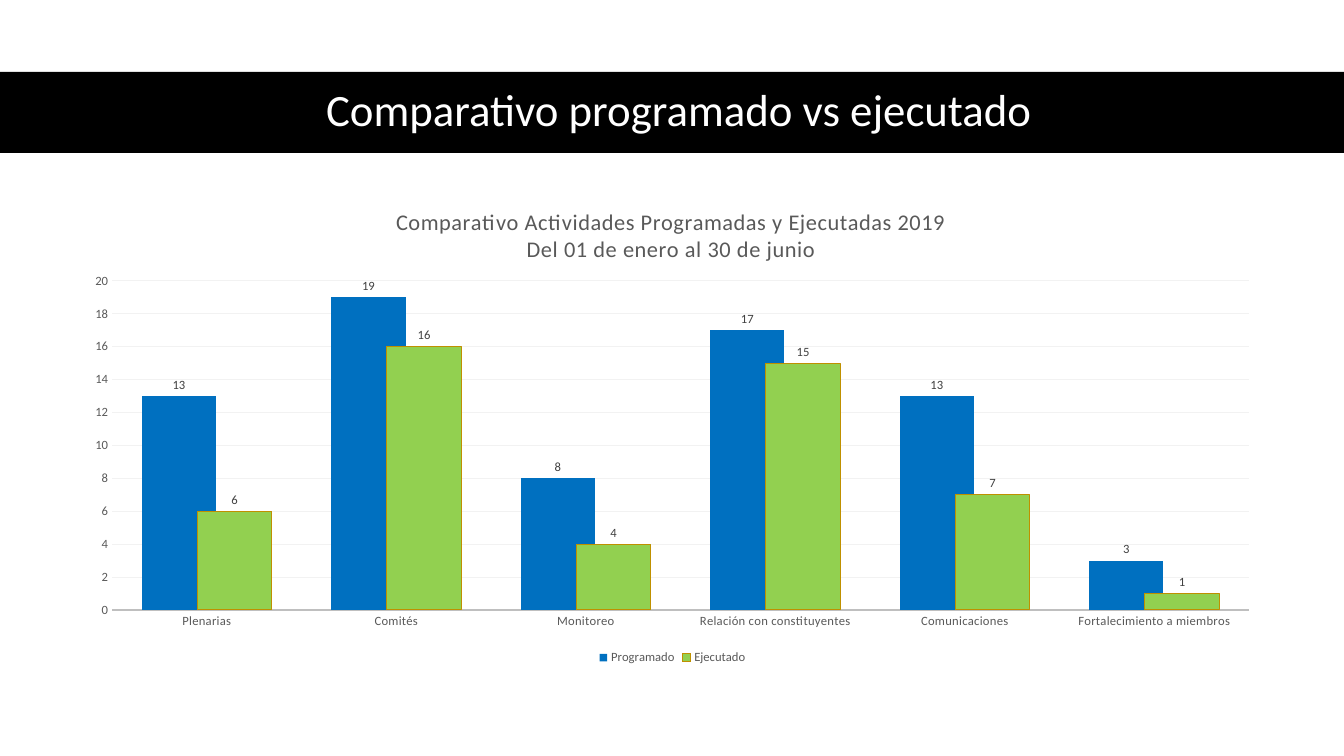
import pptx
import pptx.chart.data
import pptx.dml.color
import pptx.enum.chart
import pptx.enum.shapes
import pptx.enum.text
import pptx.oxml
import pptx.oxml.ns
import pptx.util

PX = 914400 / 100.8
FONT = "Calibri"
COLORS = {
    "band": "000000", "heading": "FFFFFF", "muted": "595959", "label": "404040",
    "axis": "BFBFBF", "grid": "F2F2F2", "planned": "0070C0", "done": "92D050",
    "done_line": "BF9000",
}
CATEGORIES = ["Plenarias", "Comités", "Monitoreo", "Relación con constituyentes",
              "Comunicaciones", "Fortalecimiento a miembros"]
SERIES = [
    ("Programado", [13, 19, 8, 17, 13, 3], "planned", None),
    ("Ejecutado", [6, 16, 4, 15, 7, 1], "done", "done_line"),
]
CHART_BOX = (71, 184, 1203, 485)


def px(n):
    """Turn pixels into EMU."""
    return pptx.util.Emu(round(n * PX))


def rgb(name):
    """Look up a named colour."""
    return pptx.dml.color.RGBColor.from_string(COLORS[name])


def style_font(font, size, color, spacing=0):
    """Set face, size, colour and letter spacing of a font."""
    font.name = FONT
    font.size = pptx.util.Pt(size)
    font.bold = False
    font.color.rgb = rgb(color)
    if spacing:
        font._element.set("spc", str(spacing))


def style_line(line, color, width):
    """Give a line its colour and width in points."""
    line.color.rgb = rgb(color)
    line.width = pptx.util.Pt(width)


def write_text(tf, text, size, color, spacing=0, line_spacing=None):
    """Write centred lines of text as paragraphs."""
    for i, line in enumerate(text.split("\n")):
        p = tf.add_paragraph() if i else tf.paragraphs[0]
        p.alignment = pptx.enum.text.PP_ALIGN.CENTER
        if line_spacing:
            p.line_spacing = line_spacing
        r = p.add_run()
        r.text = line
        style_font(r.font, size, color, spacing)


def add_band(s, box, color):
    """Add a plain filled rectangle."""
    sp = s.shapes.add_shape(pptx.enum.shapes.MSO_SHAPE.RECTANGLE, *map(px, box))
    sp.shadow.inherit = False
    sp.fill.solid()
    sp.fill.fore_color.rgb = rgb(color)
    sp.line.fill.background()


def add_heading(s, box, text):
    """Add the slide heading."""
    tf = s.shapes.add_textbox(*map(px, box)).text_frame
    tf.word_wrap = True
    tf.vertical_anchor = pptx.enum.text.MSO_ANCHOR.MIDDLE
    write_text(tf, text, 32, "heading", line_spacing=0.9)


def place(element, x, y, w=None, h=None):
    """Fix a chart part at slide pixels by a manual layout."""
    left, top, width, height = CHART_BOX
    tags = [("xMode", "edge"), ("yMode", "edge"),
            ("x", round((x - left) / width, 4)), ("y", round((y - top) / height, 4))]
    if w:
        tags.insert(0, ("layoutTarget", "inner"))
        tags += [("w", round(w / width, 4)), ("h", round(h / height, 4))]
    body = "".join(f'<c:{tag} val="{val}"/>' for tag, val in tags)
    layout = pptx.oxml.parse_xml(
        f'<c:layout {pptx.oxml.ns.nsdecls("c")}><c:manualLayout>{body}'
        "</c:manualLayout></c:layout>")
    old = element.find(pptx.oxml.ns.qn("c:layout"))
    if old is None:
        element.insert(0, layout)
    else:
        element.replace(old, layout)


def style_axes(chart):
    """Format both axes and the gridlines."""
    no_tick = pptx.enum.chart.XL_TICK_MARK.NONE
    for axis, spacing in ((chart.category_axis, 20), (chart.value_axis, 0)):
        axis.major_tick_mark = axis.minor_tick_mark = no_tick
        style_font(axis.tick_labels.font, 9, "muted", spacing)
    style_line(chart.category_axis.format.line, "axis", 1.25)
    axis = chart.value_axis
    axis.minimum_scale, axis.maximum_scale, axis.major_unit = 0, 20, 2
    axis.format.line.fill.background()
    style_line(axis.major_gridlines.format.line, "grid", 0.75)


def style_series(series, fill, line):
    """Format the bars and value labels of a series."""
    series.invert_if_negative = False
    series.format.fill.solid()
    series.format.fill.fore_color.rgb = rgb(fill)
    if line:
        style_line(series.format.line, line, 0.75)
    else:
        series.format.line.fill.background()
    labels = series.data_labels
    labels.show_value = True
    labels.position = pptx.enum.chart.XL_LABEL_POSITION.OUTSIDE_END
    style_font(labels.font, 9, "label")


def add_comparison(s, title):
    """Add the clustered column chart."""
    data = pptx.chart.data.CategoryChartData()
    data.categories = CATEGORIES
    for name, values, _, _ in SERIES:
        data.add_series(name, values)
    chart = s.shapes.add_chart(pptx.enum.chart.XL_CHART_TYPE.COLUMN_CLUSTERED,
                               *map(px, CHART_BOX), data).chart
    style_font(chart.font, 10, "band")
    chart.has_title = True
    write_text(chart.chart_title.text_frame, title, 16, "muted", spacing=50)
    chart.chart_title.include_in_layout = False
    place(chart.chart_title._element, 393, 204)
    place(chart._chartSpace.chart.plotArea, 112, 281, 1137, 329)
    chart.has_legend = True
    chart.legend.position = pptx.enum.chart.XL_LEGEND_POSITION.BOTTOM
    chart.legend.include_in_layout = False
    style_font(chart.legend.font, 9, "muted")
    plot = chart.plots[0]
    plot.gap_width, plot.overlap, plot.vary_by_categories = 80, 25, False
    for series, (_, _, fill, line) in zip(plot.series, SERIES):
        style_series(series, fill, line)
    style_axes(chart)


def main():
    """Build and save the slide."""
    prs = pptx.Presentation()
    prs.slide_width, prs.slide_height = px(1344), px(756)
    s = prs.slides.add_slide(prs.slide_layouts[6])
    add_band(s, (0, 72, 1344, 81), "band")
    add_heading(s, (61, 71, 1236, 81), "Comparativo programado vs ejecutado")
    add_comparison(s, "Comparativo Actividades Programadas y Ejecutadas 2019\n"
                      "Del 01 de enero al 30 de junio")
    prs.save("out.pptx")


if __name__ == "__main__":
    main()
